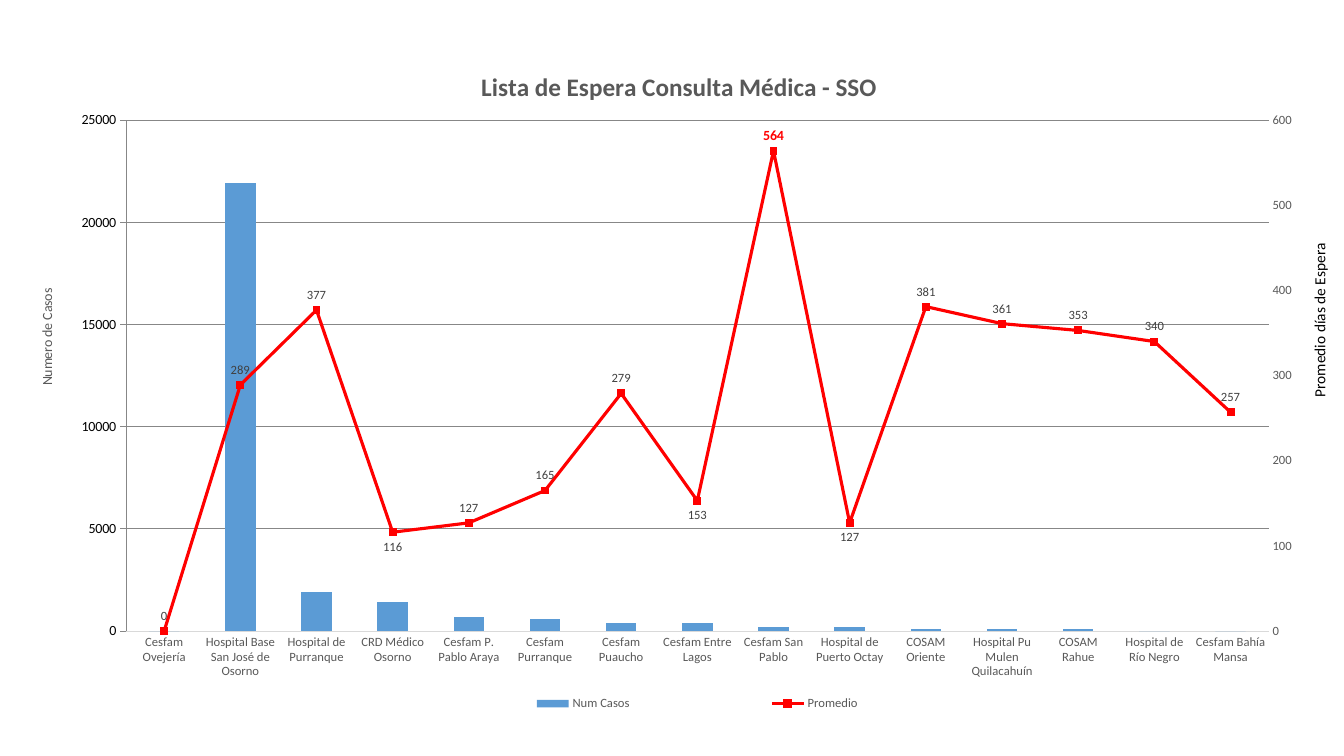
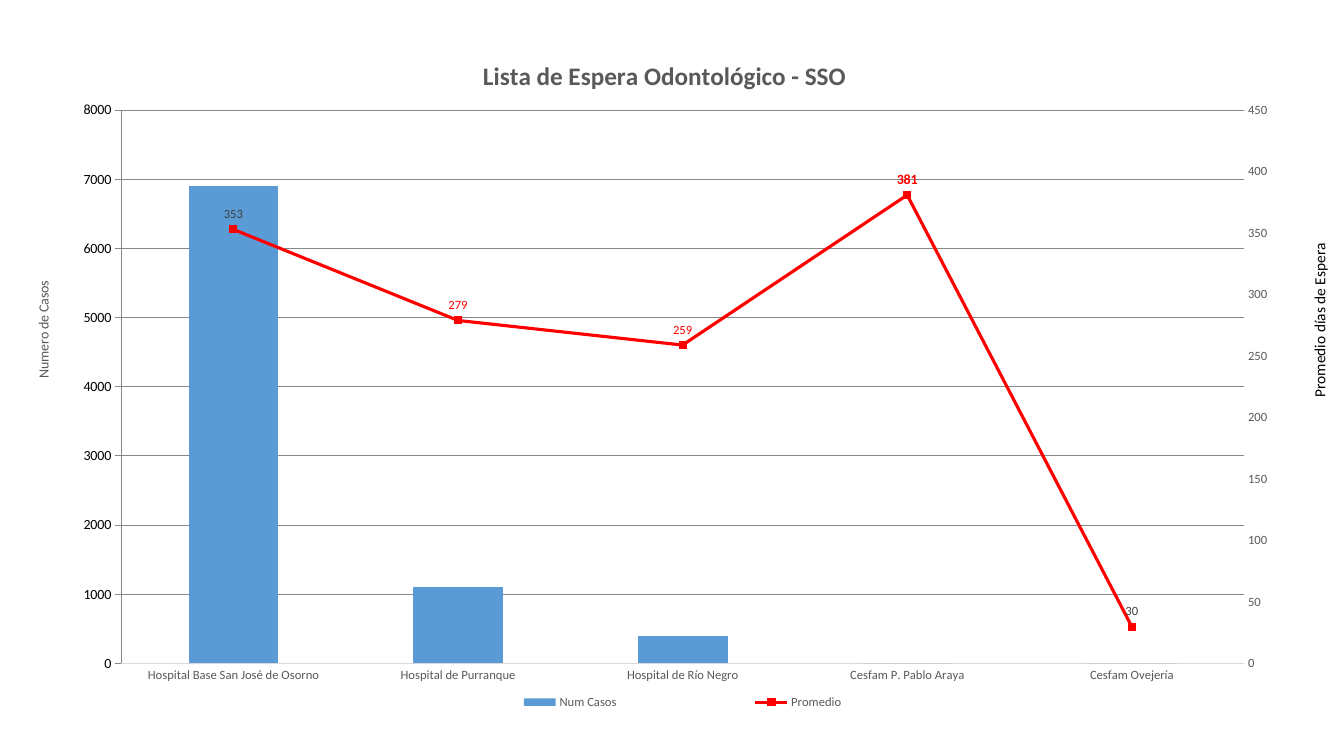
from dataclasses import dataclass

from pptx import Presentation
from pptx import util as u
from pptx.chart.axis import ValueAxis
from pptx.chart.data import CategoryChartData
from pptx.dml.color import RGBColor
from pptx.enum import chart as ch
from pptx.oxml import parse_xml
from pptx.oxml.ns import nsdecls, qn


@dataclass(frozen=True)
class Theme:
    face: str = "Calibri"
    bars: str = "5B9BD5"
    waiting: str = "FF0000"
    grid: str = "D9D9D9"
    muted: str = "595959"
    label: str = "404040"
    ink: str = "000000"
    title_size: int = 18
    side_size: int = 11
    base_size: int = 10
    small_size: int = 9


@dataclass(frozen=True)
class Highlight:
    color: str = Theme.label
    size: int = Theme.small_size
    bold: bool = False
    below: bool = False


@dataclass(frozen=True)
class WaitingList:
    title: str
    box: tuple
    title_x: float
    plot_height: float
    number_format: str
    cases_scale: tuple
    days_scale: tuple
    rows: tuple
    highlights: dict


THEME = Theme()
PEAK = Highlight(THEME.waiting, THEME.base_size, bold=True)
RED = Highlight(THEME.waiting)
BELOW = Highlight(below=True)

MEDICAL = WaitingList(
    title="Lista de Espera Consulta Médica - SSO",
    box=(0.56, 0.94, 32.72, 17.4),
    title_x=0.35,
    plot_height=0.74,
    number_format="0",
    cases_scale=(25000, 5000),
    days_scale=(600, 100),
    rows=(
        ("Cesfam Ovejería", 0, 0),
        ("Hospital Base San José de Osorno", 21900, 289),
        ("Hospital de Purranque", 1900, 377),
        ("CRD Médico Osorno", 1400, 116),
        ("Cesfam P. Pablo Araya", 700, 127),
        ("Cesfam Purranque", 600, 165),
        ("Cesfam Puaucho", 400, 279),
        ("Cesfam Entre Lagos", 400, 153),
        ("Cesfam San Pablo", 200, 564),
        ("Hospital de Puerto Octay", 200, 127),
        ("COSAM Oriente", 100, 381),
        ("Hospital Pu Mulen Quilacahuín", 100, 361),
        ("COSAM Rahue", 100, 353),
        ("Hospital de Río Negro", 0, 340),
        ("Cesfam Bahía Mansa", 0, 257),
    ),
    highlights={3: BELOW, 7: BELOW, 8: PEAK, 9: BELOW},
)

DENTAL = WaitingList(
    title="Lista de Espera Odontológico - SSO",
    box=(0.48, 0.66, 32.16, 17.65),
    title_x=0.36,
    plot_height=0.79,
    number_format="#,##0",
    cases_scale=(8000, 1000),
    days_scale=(450, 50),
    rows=(
        ("Hospital Base San José de Osorno", 6900, 353),
        ("Hospital de Purranque", 1100, 279),
        ("Hospital de Río Negro", 400, 259),
        ("Cesfam P. Pablo Araya", 0, 381),
        ("Cesfam Ovejería", 0, 30),
    ),
    highlights={1: RED, 2: RED, 3: PEAK},
)


def style_font(font, size, color, bold=False):
    font.name = THEME.face
    font.size = u.Pt(size)
    font.bold = bold
    font.color.rgb = RGBColor.from_string(color)


def write_run(frame, words, size, color, bold=False):
    run = frame.paragraphs[0].add_run()
    run.text = words
    style_font(run.font, size, color, bold)


def style_line(line, color, width):
    line.color.rgb = RGBColor.from_string(color)
    line.width = u.Pt(width)


def set_layout(parent, after, x, y, size=None, inner=False):
    for old in parent.findall(qn("c:layout")):
        parent.remove(old)
    target = '<c:layoutTarget val="inner"/>' if inner else ""
    extent = f'<c:w val="{size[0]}"/><c:h val="{size[1]}"/>' if size else ""
    layout = parse_xml(
        f'<c:layout {nsdecls("c")}><c:manualLayout>{target}'
        '<c:xMode val="edge"/><c:yMode val="edge"/>'
        f'<c:x val="{x}"/><c:y val="{y}"/>{extent}</c:manualLayout></c:layout>'
    )
    if after:
        parent.find(qn(after)).addnext(layout)
    else:
        parent.insert(0, layout)


def move_days_to_right_axis(chart):
    plot_area = chart.element.find(".//" + qn("c:plotArea"))
    bar_chart = plot_area.find(qn("c:barChart"))
    days = bar_chart.findall(qn("c:ser"))[1]
    for flag in days.findall(qn("c:invertIfNegative")):
        days.remove(flag)
    line_chart = parse_xml(
        f'<c:lineChart {nsdecls("c")}><c:grouping val="standard"/><c:varyColors val="0"/>'
        '<c:marker val="1"/><c:axId val="5001"/><c:axId val="5002"/></c:lineChart>'
    )
    line_chart.find(qn("c:varyColors")).addnext(days)
    bar_chart.addnext(line_chart)
    hidden_categories = parse_xml(
        f'<c:catAx {nsdecls("c")}><c:axId val="5001"/>'
        '<c:scaling><c:orientation val="minMax"/></c:scaling><c:delete val="1"/>'
        '<c:axPos val="b"/><c:crossAx val="5002"/><c:crosses val="autoZero"/></c:catAx>'
    )
    days_axis = parse_xml(
        f'<c:valAx {nsdecls("c")}><c:axId val="5002"/>'
        '<c:scaling><c:orientation val="minMax"/></c:scaling><c:delete val="0"/>'
        '<c:axPos val="r"/><c:numFmt formatCode="0" sourceLinked="0"/>'
        '<c:majorTickMark val="none"/><c:minorTickMark val="none"/>'
        '<c:tickLblPos val="nextTo"/><c:crossAx val="5001"/><c:crosses val="max"/>'
        '<c:crossBetween val="between"/></c:valAx>'
    )
    plot_area.findall(qn("c:valAx"))[-1].addnext(hidden_categories)
    hidden_categories.addnext(days_axis)
    return plot_area, ValueAxis(days_axis)


def style_axis(axis):
    axis.major_tick_mark = axis.minor_tick_mark = ch.XL_TICK_MARK.NONE
    style_font(axis.tick_labels.font, THEME.small_size, THEME.muted)


def style_value_axis(axis, scale):
    style_axis(axis)
    axis.minimum_scale = 0
    axis.maximum_scale, axis.major_unit = scale
    axis.format.line.fill.background()


def style_axes(chart, days_axis, waiting_list):
    style_axis(chart.category_axis)
    style_line(chart.category_axis.format.line, THEME.grid, 0.75)

    cases_axis = chart.value_axis
    style_value_axis(cases_axis, waiting_list.cases_scale)
    style_value_axis(days_axis, waiting_list.days_scale)
    cases_axis.tick_labels.number_format = waiting_list.number_format
    cases_axis.tick_labels.number_format_is_linked = False
    cases_axis.has_major_gridlines = True
    style_line(cases_axis.major_gridlines.format.line, THEME.grid, 0.75)

    cases_title = cases_axis.axis_title
    write_run(cases_title.text_frame, "Numero de Casos", THEME.base_size, THEME.muted)
    turned = cases_title._element.find(".//" + qn("a:bodyPr"))
    turned.set("rot", "-5400000")
    turned.set("vert", "horz")
    set_layout(cases_title._element, "c:tx", 0.01, 0.36)


def style_series(chart, highlights):
    bars, lines = chart.plots
    bars.gap_width = 150
    bars.vary_by_categories = False
    cases, days = bars.series[0], lines.series[0]
    waiting = RGBColor.from_string(THEME.waiting)
    cases.format.fill.solid()
    cases.format.fill.fore_color.rgb = RGBColor.from_string(THEME.bars)

    days.smooth = False
    style_line(days.format.line, THEME.waiting, 2.25)
    days.marker.style = ch.XL_MARKER_STYLE.SQUARE
    days.marker.size = 5
    days.marker.format.fill.solid()
    days.marker.format.fill.fore_color.rgb = waiting
    days.marker.format.line.color.rgb = waiting

    labels = days.data_labels
    labels.show_value = True
    labels.position = ch.XL_LABEL_POSITION.ABOVE
    style_font(labels.font, THEME.small_size, THEME.label)
    for index, mark in highlights.items():
        label = days.points[index].data_label
        style_font(label.font, mark.size, mark.color, mark.bold)
        side = ch.XL_LABEL_POSITION
        label.position = side.BELOW if mark.below else side.ABOVE


def add_waiting_chart(slide, waiting_list):
    names, cases, days = zip(*waiting_list.rows)
    figures = CategoryChartData()
    figures.categories = names
    figures.add_series("Num Casos", cases)
    figures.add_series("Promedio", days)
    box = [u.Cm(length) for length in waiting_list.box]
    chart = slide.shapes.add_chart(ch.XL_CHART_TYPE.COLUMN_CLUSTERED, *box, figures).chart
    style_font(chart.font, THEME.base_size, THEME.ink)

    plot_area, days_axis = move_days_to_right_axis(chart)
    set_layout(plot_area, None, 0.08, 0.12, (0.88, waiting_list.plot_height), inner=True)
    style_axes(chart, days_axis, waiting_list)
    style_series(chart, waiting_list.highlights)

    chart.has_title = True
    heading = chart.chart_title
    write_run(heading.text_frame, waiting_list.title, THEME.title_size, THEME.muted, True)
    set_layout(heading._element, "c:tx", waiting_list.title_x, 0.04)

    chart.has_legend = True
    legend = chart.legend
    legend.position = ch.XL_LEGEND_POSITION.BOTTOM
    legend.include_in_layout = False
    style_font(legend.font, THEME.small_size, THEME.muted)
    set_layout(legend._element, "c:legendPos", 0.29, 0.94, (0.46, 0.05))


def add_days_caption(slide, left, top, width, height):
    caption = slide.shapes.add_textbox(u.Cm(left), u.Cm(top), u.Cm(width), u.Cm(height))
    caption.text_frame.word_wrap = False
    caption._element.find(".//" + qn("a:bodyPr")).set("vert", "vert270")
    write_run(caption.text_frame, "Promedio días de Espera", THEME.side_size, THEME.ink)


def add_waiting_slide(deck, waiting_list):
    slide = deck.slides.add_slide(deck.slide_layouts.get_by_name("Blank"))
    add_waiting_chart(slide, waiting_list)
    add_days_caption(slide, 32.89, 5.82, 0.79, 4.45)


def main():
    deck = Presentation()
    deck.slide_width, deck.slide_height = u.Cm(33.87), u.Cm(19.05)
    for waiting_list in (MEDICAL, DENTAL):
        add_waiting_slide(deck, waiting_list)
    deck.save("out.pptx")


if __name__ == "__main__":
    main()
